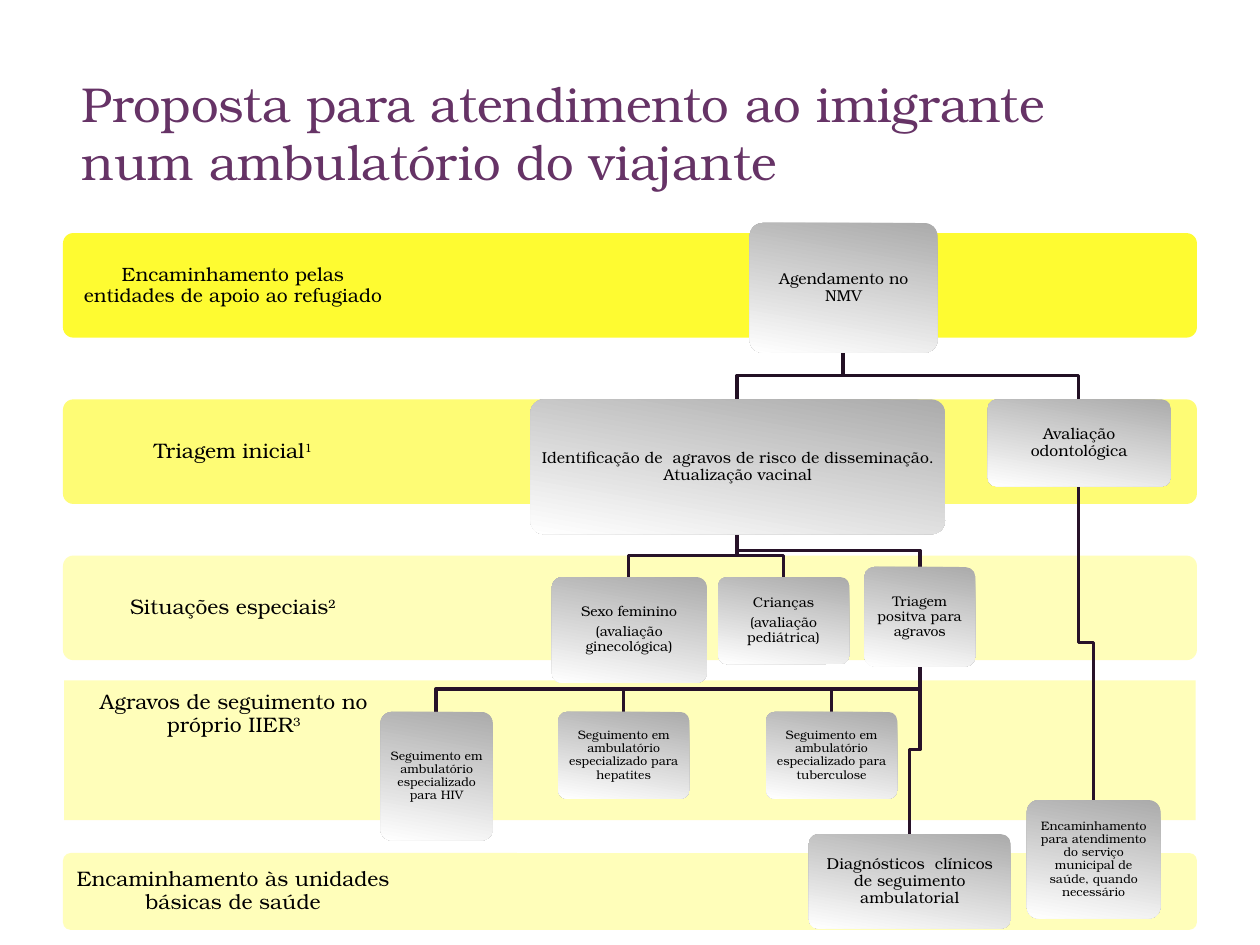
import dataclasses

import lxml.etree
import pptx
import pptx.dml.color
import pptx.enum.shapes
import pptx.enum.text
import pptx.util

PX = 9144  # EMU per px, 100 px to the inch
FONT = "TeX Gyre Bonum"
SHAPE = pptx.enum.shapes.MSO_SHAPE
ALIGN = pptx.enum.text.PP_ALIGN
ANCHOR = pptx.enum.text.MSO_ANCHOR


@dataclasses.dataclass
class Band:
    """A coloured row with its label; note is the superscript after the label."""
    y: int
    h: int
    color: str
    label: str
    note: str = ""
    size: int = 12
    x: int = 50
    w: int = 900
    shape: int = SHAPE.ROUNDED_RECTANGLE
    anchor: int = ANCHOR.MIDDLE


@dataclasses.dataclass
class Box:
    x: int
    y: int
    w: int
    h: int
    size: int
    lines: list[str]


@dataclasses.dataclass
class Link:
    parent: str
    child: str
    color: str = "271229"


BANDS = [
    Band(185, 83, "FEFB31", "Encaminhamento pelas entidades de apoio ao refugiado", size=11),
    Band(317, 83, "FEFC75", "Triagem inicial", "1"),
    Band(441, 83, "FFFEBA", "Situações especiais", "2"),
    Band(540, 111, "FFFEBA", "Agravos de seguimento no próprio IIER", "3",
         x=51, w=898, shape=SHAPE.RECTANGLE, anchor=ANCHOR.TOP),
    Band(677, 61, "FFFEBA", "Encaminhamento às unidades básicas de saúde"),
]

FOLLOW_UP = "Seguimento em ambulatório especializado para "
BOXES = {
    "agendamento": Box(595, 177, 149, 103, 9, ["Agendamento no NMV"]),
    "agravos": Box(421, 317, 329, 107, 9, [
        "Identificação de  agravos de risco de disseminação. Atualização vacinal"]),
    "odonto": Box(784, 317, 145, 69, 9, ["Avaliação odontológica"]),
    "feminino": Box(438, 458, 123, 84, 8, ["Sexo feminino", "(avaliação ginecológica)"]),
    "criancas": Box(570, 458, 104, 69, 8, ["Crianças", "(avaliação pediátrica)"]),
    "triagem": Box(686, 450, 88, 79, 8, ["Triagem positva para agravos"]),
    "hiv": Box(302, 565, 89, 102, 7, [FOLLOW_UP + "HIV"]),
    "hepatites": Box(443, 565, 104, 69, 7, [FOLLOW_UP + "hepatites"]),
    "tuberculose": Box(608, 565, 104, 69, 7, [FOLLOW_UP + "tuberculose"]),
    "clinicos": Box(642, 662, 160, 75, 9, [
        "Diagnósticos  clínicos de seguimento ambulatorial"]),
    "municipal": Box(815, 635, 106, 94, 7, [
        "Encaminhamento para atendimento do serviço municipal de saúde, quando necessário"]),
}

LINKS = [
    Link("agendamento", "agravos", "221024"),
    Link("agendamento", "odonto", "221024"),
    *(Link("agravos", child) for child in ("feminino", "criancas", "triagem")),
    *(Link("triagem", child) for child in ("hiv", "hepatites", "tuberculose", "clinicos")),
    Link("odonto", "municipal"),
]


def rgb(color: str) -> pptx.dml.color.RGBColor:
    return pptx.dml.color.RGBColor.from_string(color)


def px(*lengths: int) -> list[pptx.util.Emu]:
    return [pptx.util.Emu(n * PX) for n in lengths]


def apply(target, values: dict) -> None:
    for name, value in values.items():
        setattr(target, name, value)


def set_frame(tf, inset: int, anchor) -> None:
    margin = px(inset)[0]
    apply(tf, dict(word_wrap=True, vertical_anchor=anchor, margin_left=margin,
                   margin_right=margin, margin_top=margin, margin_bottom=margin))


def add_run(p, text: str, size: int, color: str = "000000"):
    r = p.add_run()
    r.text = text
    apply(r.font, dict(name=FONT, size=pptx.util.Pt(size)))
    r.font.color.rgb = rgb(color)
    return r


def format_paragraph(p, size: int) -> None:
    apply(p, dict(alignment=ALIGN.CENTER, line_spacing=0.9,
                  space_after=pptx.util.Pt(0.35 * size)))


def add_panel(s, shape, x: int, y: int, w: int, h: int):
    """Add a shape without line or shadow; rounded ones get small corners."""
    sp = s.shapes.add_shape(shape, *px(x, y, w, h))
    sp.shadow.inherit = False
    sp.line.fill.background()
    if shape == SHAPE.ROUNDED_RECTANGLE:
        sp.adjustments[0] = 0.1
    return sp


def add_title(s) -> None:
    sp = s.shapes.title
    apply(sp, dict(zip(("left", "top", "width", "height"), px(55, 53, 826, 122))))
    tf = sp.text_frame
    apply(tf, dict(word_wrap=True, vertical_anchor=ANCHOR.TOP,
                   auto_size=pptx.enum.text.MSO_AUTO_SIZE.NONE))
    p = tf.paragraphs[0]
    p.alignment = ALIGN.LEFT
    add_run(p, "Proposta para atendimento ao imigrante num ambulatório do viajante",
            28, "663366")


def add_band(s, band: Band) -> None:
    sp = add_panel(s, band.shape, band.x, band.y, band.w, band.h)
    sp.fill.solid()
    sp.fill.fore_color.rgb = rgb(band.color)
    label = s.shapes.add_textbox(*px(band.x, band.y, 320 - band.x, band.h))
    set_frame(label.text_frame, 9, band.anchor)
    p = label.text_frame.paragraphs[0]
    format_paragraph(p, band.size)
    add_run(p, band.label, band.size)
    if band.note:
        r = add_run(p, band.note, band.size)
        r.font._element.set("baseline", "30000")


def add_box(s, box: Box) -> None:
    sp = add_panel(s, SHAPE.ROUNDED_RECTANGLE, box.x, box.y, box.w, box.h)
    sp.fill.gradient()
    sp.fill.gradient_angle = 260
    for stop, color in zip(sp.fill.gradient_stops, ("ABABAB", "FFFFFF")):
        stop.color.rgb = rgb(color)
    tf = sp.text_frame
    set_frame(tf, 4 if box.size == 9 else 3, ANCHOR.MIDDLE)
    for i, line in enumerate(box.lines):
        p = tf.add_paragraph() if i else tf.paragraphs[0]
        format_paragraph(p, box.size)
        add_run(p, line, box.size)


def add_link(s, link: Link) -> None:
    """Draw an elbow from the parent's bottom centre to the child's top centre."""
    parent, child = BOXES[link.parent], BOXES[link.child]
    x1, y1 = parent.x + parent.w // 2, parent.y + parent.h
    x2, y2 = child.x + child.w // 2, child.y
    middle = (y1 + y2) // 2
    builder = s.shapes.build_freeform(x1, y1, scale=PX)
    builder.add_line_segments([(x1, middle), (x2, middle), (x2, y2)], close=False)
    sp = builder.convert_to_shape()
    sp.shadow.inherit = False
    sp.fill.background()
    sp.line.color.rgb = rgb(link.color)
    sp.line.width = pptx.util.Pt(2)


def main() -> None:
    prs = pptx.Presentation()
    prs.slide_width, prs.slide_height = px(1000, 750)
    s = prs.slides.add_slide(prs.slide_layouts[5])
    add_title(s)
    for band in BANDS:
        add_band(s, band)
    for link in LINKS:
        add_link(s, link)
    for box in BOXES.values():
        add_box(s, box)
    prs.save("out.pptx")


if __name__ == "__main__":
    main()
